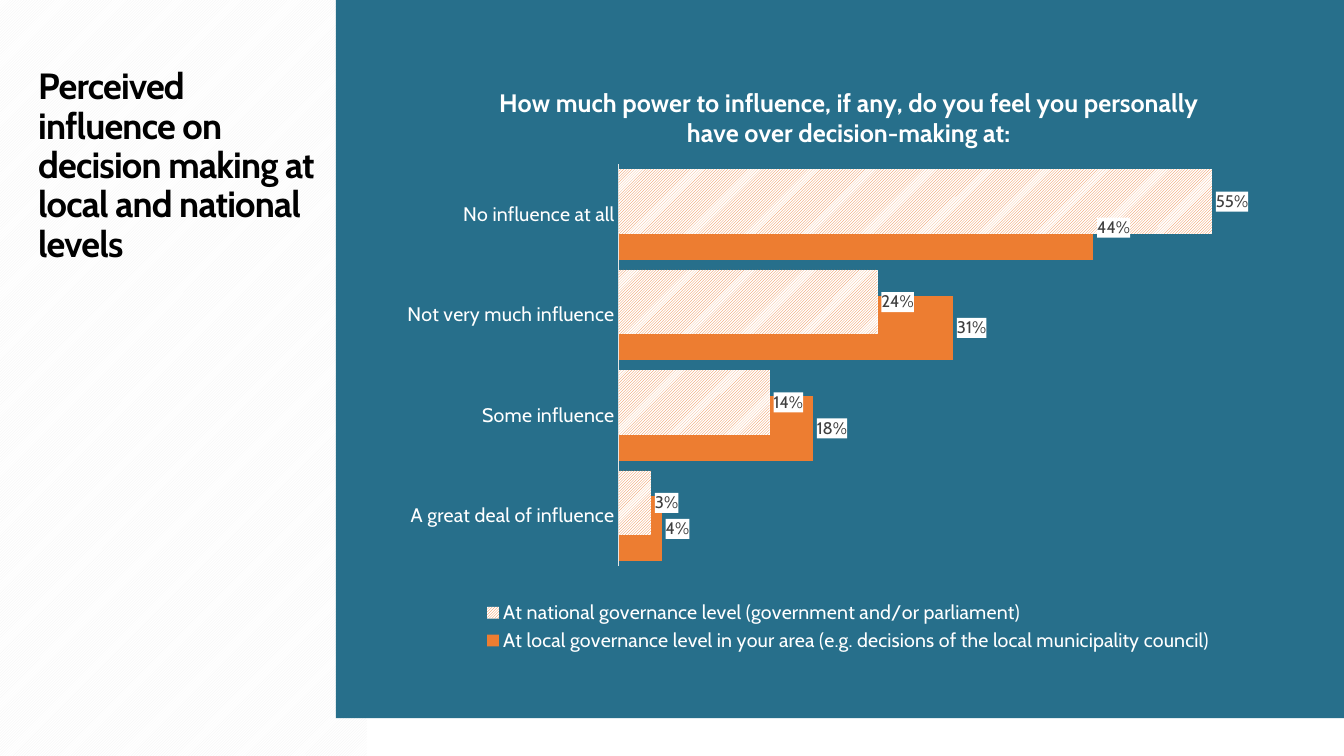
"""Build the slide on perceived influence on decision making."""
from lxml import etree
from pptx import Presentation
from pptx import util as u
from pptx.chart.data import CategoryChartData
from pptx.dml.color import RGBColor
from pptx.enum import chart as ch, dml, shapes
from pptx.oxml.ns import qn

HEADING = "Perceived influence on decision making at local and national levels"
QUESTION = ("How much power to influence, if any, do you feel you personally "
            "have over decision-making at:")
ANSWERS = ["A great deal of influence", "Some influence",
           "Not very much influence", "No influence at all"]
LEVELS = [
    ("At local governance level in your area "
     "(e.g. decisions of the local municipality council)",
     (0.04, 0.18, 0.31, 0.44)),
    ("At national governance level (government and/or parliament)",
     (0.03, 0.14, 0.24, 0.55)),
]
PLOT_LAYOUT = {"layoutTarget": "inner", "xMode": "edge", "yMode": "edge",
               "x": 0.252, "y": 0.17, "w": 0.698, "h": 0.678}
LEGEND_LAYOUT = {"xMode": "edge", "yMode": "edge",
                 "x": 0.1, "y": 0.9, "w": 0.8, "h": 0.1}

FONT = "Cabin"
BLACK = RGBColor(0, 0, 0)
WHITE = RGBColor(255, 255, 255)
PALE = RGBColor(0xF2, 0xF2, 0xF2)
TEAL = RGBColor(0x27, 0x6F, 0x8B)
ORANGE = RGBColor(0xED, 0x7D, 0x31)
AXIS_GREY = RGBColor(0xE5, 0xE5, 0xE5)
LABEL_GREY = RGBColor(0x3F, 0x3F, 0x3F)

WIDTH, HEIGHT = 960, 540
STRIP_WIDTH = 262
PANEL_LEFT, PANEL_HEIGHT = 240, 513


def style(font, size, color, bold=False):
    font.name, font.size, font.bold = FONT, u.Pt(size), bold
    font.color.rgb = color


def write(frame, text, size, color, spacing=None, line=None):
    para = frame.paragraphs[0]
    para.line_spacing = line
    span = para.add_run()
    span.text = text
    style(span.font, size, color, bold=True)
    if spacing is not None:
        span.font._element.set("spc", str(spacing))


def hatch(fill, pattern, color):
    fill.patterned()
    fill.pattern = pattern
    fill.fore_color.rgb = color
    fill.back_color.rgb = WHITE


def add_block(page, left, width, height):
    block = page.shapes.add_shape(shapes.MSO_SHAPE.RECTANGLE, u.Pt(left), 0,
                                  u.Pt(width), u.Pt(height))
    block.shadow.inherit = False
    block.line.fill.background()
    return block


def place(part, after, values):
    for old in part.findall(qn("c:layout")):
        part.remove(old)
    layout = etree.Element(qn("c:layout"))
    manual = etree.SubElement(layout, qn("c:manualLayout"))
    for name, value in values.items():
        etree.SubElement(manual, qn(f"c:{name}")).set("val", str(value))
    if after is None:
        part.insert(0, layout)
    else:
        part.find(qn(after)).addnext(layout)


def add_influence_chart(page):
    data = CategoryChartData(number_format="0%")
    data.categories = ANSWERS
    for name, values in LEVELS:
        data.add_series(name, values)
    chart = page.shapes.add_chart(ch.XL_CHART_TYPE.BAR_CLUSTERED, u.Pt(275), u.Pt(45.4),
                                  u.Pt(662.4), u.Pt(423.4), data).chart
    style(chart.font, 10, BLACK)
    chart.has_title = True
    write(chart.chart_title.text_frame, QUESTION, 18, WHITE)
    chart.chart_title.include_in_layout = False

    plot = chart.plots[0]
    plot.gap_width, plot.overlap = 15, 60
    plot.vary_by_categories = False
    local, national = plot.series
    local.format.fill.solid()
    local.format.fill.fore_color.rgb = ORANGE
    hatch(national.format.fill, dml.MSO_PATTERN.LIGHT_UPWARD_DIAGONAL, ORANGE)
    for series in plot.series:
        add_labels(series)

    answers, shares = chart.category_axis, chart.value_axis
    answers.major_tick_mark = ch.XL_TICK_MARK.NONE
    answers.format.line.color.rgb = AXIS_GREY
    answers.format.line.width = u.Pt(0.75)
    style(answers.tick_labels.font, 14, WHITE)
    shares.minimum_scale, shares.maximum_scale = 0, 0.6
    shares.has_major_gridlines = False
    shares.visible = False

    chart.has_legend = True
    legend = chart.legend
    legend.position = ch.XL_LEGEND_POSITION.BOTTOM
    legend.include_in_layout = False
    style(legend.font, 14, WHITE)
    place(legend._element, "c:legendPos", LEGEND_LAYOUT)
    place(chart._chartSpace.chart.plotArea, None, PLOT_LAYOUT)


def add_labels(series):
    labels = series.data_labels
    labels.show_value = True
    labels.number_format, labels.number_format_is_linked = "0%", False
    labels.position = ch.XL_LABEL_POSITION.OUTSIDE_END
    style(labels.font, 12, LABEL_GREY)
    look = etree.Element(qn("c:spPr"))
    fill = etree.SubElement(look, qn("a:solidFill"))
    etree.SubElement(fill, qn("a:srgbClr")).set("val", str(WHITE))
    labels._element.find(qn("c:numFmt")).addnext(look)


def main():
    deck = Presentation()
    deck.slide_width, deck.slide_height = u.Pt(WIDTH), u.Pt(HEIGHT)
    page = deck.slides.add_slide(deck.slide_layouts[6])
    strip = add_block(page, 0, STRIP_WIDTH, HEIGHT)
    hatch(strip.fill, dml.MSO_PATTERN.DARK_UPWARD_DIAGONAL, PALE)
    panel = add_block(page, PANEL_LEFT, WIDTH - PANEL_LEFT, PANEL_HEIGHT)
    panel.fill.solid()
    panel.fill.fore_color.rgb = TEAL
    box = page.shapes.add_textbox(u.Pt(20.2), u.Pt(45.4), u.Pt(213), u.Pt(315.4))
    box.text_frame.word_wrap = True
    write(box.text_frame, HEADING, 26, BLACK, spacing=-60, line=0.9)
    add_influence_chart(page)
    deck.save("out.pptx")


if __name__ == "__main__":
    main()
